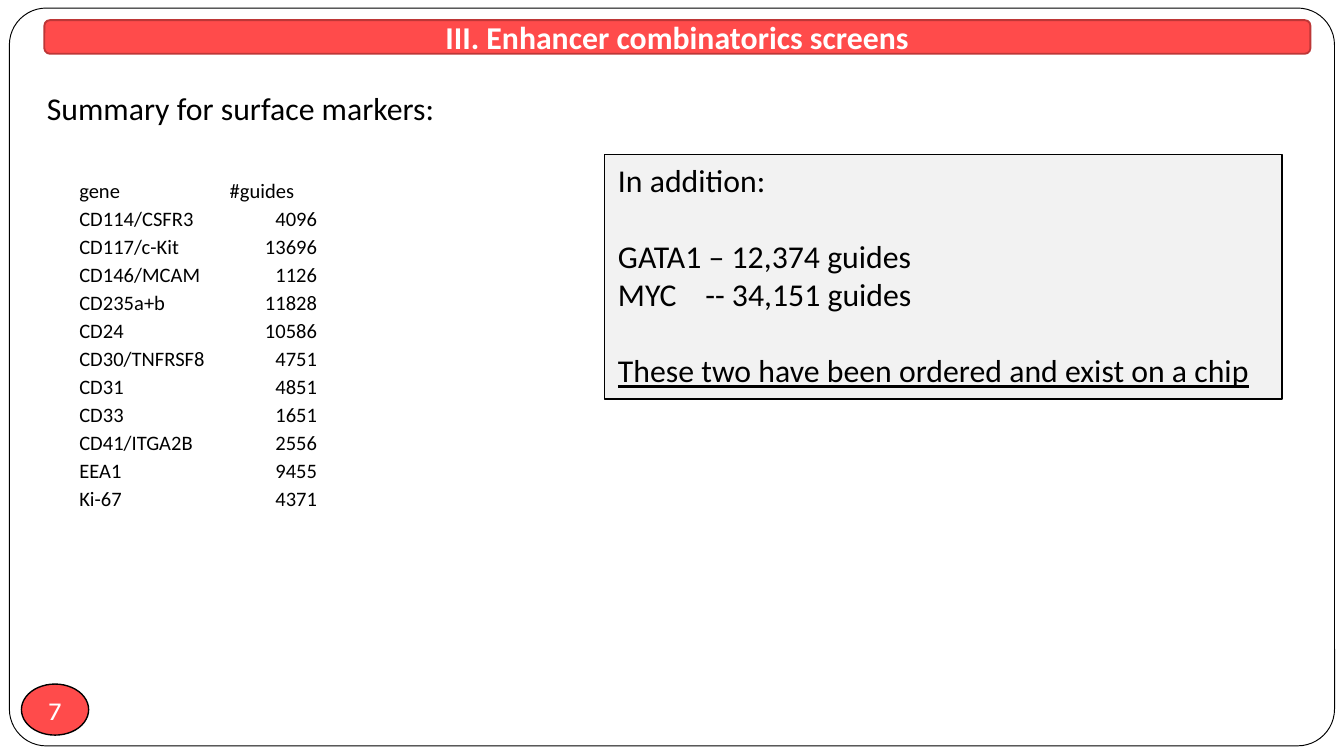
from lxml import etree
from pptx import Presentation
from pptx import util as u
from pptx.dml.color import RGBColor
from pptx.enum import shapes, text
from pptx.oxml.ns import qn

COLORS = {"red": "FF4B4B", "dark_red": "BD3737", "white": "FFFFFF",
          "black": "000000", "gray": "F2F2F2"}
TITLE = "III. Enhancer combinatorics screens"
SUMMARY = "Summary for surface markers:"
PAGE = "7"
GUIDES = [
    ("gene", "#guides"),
    ("CD114/CSFR3", "4096"),
    ("CD117/c-Kit", "13696"),
    ("CD146/MCAM", "1126"),
    ("CD235a+b", "11828"),
    ("CD24", "10586"),
    ("CD30/TNFRSF8", "4751"),
    ("CD31", "4851"),
    ("CD33", "1651"),
    ("CD41/ITGA2B", "2556"),
    ("EEA1", "9455"),
    ("Ki-67", "4371"),
]
COL_WIDTHS = (1.12, 0.67)
TABLE_HEIGHT = 2.5
LINE_GAP = 20.3
ORDERED = [
    ("In addition:", 0, False),
    ("GATA1 – 12,374 guides", LINE_GAP, False),
    ("MYC\t-- 34,151 guides", 0, False),
    ("These two have been ordered and exist on a chip", LINE_GAP, True),
]
DASH_TAB = 0.65


def rgb(name):
    return RGBColor.from_string(COLORS[name])


def add_box(s, kind, at, fill, line, width):
    sp = s.shapes.add_shape(kind, *map(u.Inches, at))
    sp.shadow.inherit = False
    sp.fill.solid()
    sp.fill.fore_color.rgb = rgb(fill)
    sp.line.color.rgb = rgb(line)
    sp.line.width = u.Pt(width)
    return sp


def style(p, size, color="black", align=text.PP_ALIGN.LEFT, name="Calibri"):
    p.alignment = align
    p.font.size = u.Pt(size)
    p.font.name = name
    p.font.color.rgb = rgb(color)


def add_guides_table(s):
    table = s.shapes.add_table(
        len(GUIDES), len(COL_WIDTHS), u.Inches(0.58), u.Inches(1.31),
        u.Inches(sum(COL_WIDTHS)), u.Inches(TABLE_HEIGHT)).table
    table.first_row = table.horz_banding = False
    for col, width in zip(table.columns, COL_WIDTHS):
        col.width = u.Inches(width)
    for i, values in enumerate(GUIDES):
        table.rows[i].height = u.Inches(TABLE_HEIGHT / len(GUIDES))
        for j, value in enumerate(values):
            cell = table.cell(i, j)
            cell.fill.background()
            cell.margin_left = cell.margin_right = cell.margin_top = u.Inches(0.01)
            cell.margin_bottom = 0
            cell.vertical_anchor = text.MSO_ANCHOR.BOTTOM
            cell.text = value
            align = text.PP_ALIGN.RIGHT if i and j else text.PP_ALIGN.LEFT
            style(cell.text_frame.paragraphs[0], 11, align=align)


def add_ordered_box(s):
    sp = add_box(s, shapes.MSO_SHAPE.RECTANGLE, (4.5, 1.15, 5.04, 1.82),
                 "gray", "black", 0.75)
    tf = sp.text_frame
    tf.word_wrap = True
    tf.vertical_anchor = text.MSO_ANCHOR.TOP
    tf.text = "\n".join(line for line, _, _ in ORDERED)
    for p, (line, gap, underlined) in zip(tf.paragraphs, ORDERED):
        style(p, 17)
        p.space_before = u.Pt(gap)
        p.font.underline = underlined
        if "\t" in line:
            pPr = p._p.get_or_add_pPr()
            tabs = etree.Element(qn("a:tabLst"))
            etree.SubElement(tabs, qn("a:tab"), pos=str(u.Inches(DASH_TAB)), algn="l")
            pPr.find(qn("a:defRPr")).addprevious(tabs)


def main():
    prs = Presentation()
    prs.slide_width = u.Inches(10)
    prs.slide_height = prs.slide_width * 9 // 16
    s = prs.slides.add_slide(prs.slide_layouts[6])

    frame = add_box(s, shapes.MSO_SHAPE.ROUNDED_RECTANGLE,
                    (0.07, 0.06, 9.86, 5.49), "white", "black", 0.5)
    frame.adjustments[0] = 0.05

    badge = add_box(s, shapes.MSO_SHAPE.OVAL, (0.16, 5.09, 0.5, 0.38),
                    "red", "black", 0.75)
    tf = badge.text_frame
    tf.margin_left = tf.margin_right = tf.margin_top = tf.margin_bottom = 0
    tf.word_wrap = False
    tf.text = PAGE
    style(tf.paragraphs[0], 14, "white", text.PP_ALIGN.CENTER, "Karla")

    banner = add_box(s, shapes.MSO_SHAPE.ROUNDED_RECTANGLE,
                     (0.33, 0.15, 9.42, 0.25), "red", "dark_red", 1)
    banner.text_frame.text = TITLE
    p = banner.text_frame.paragraphs[0]
    style(p, 17, "white", text.PP_ALIGN.CENTER)
    p.font.bold = True

    summary = s.shapes.add_textbox(*map(u.Inches, (0.25, 0.61, 3.11, 0.96)))
    summary.text_frame.word_wrap = True
    summary.text_frame.text = SUMMARY
    style(summary.text_frame.paragraphs[0], 17)

    add_guides_table(s)
    add_ordered_box(s)
    prs.save("out.pptx")


if __name__ == "__main__":
    main()
